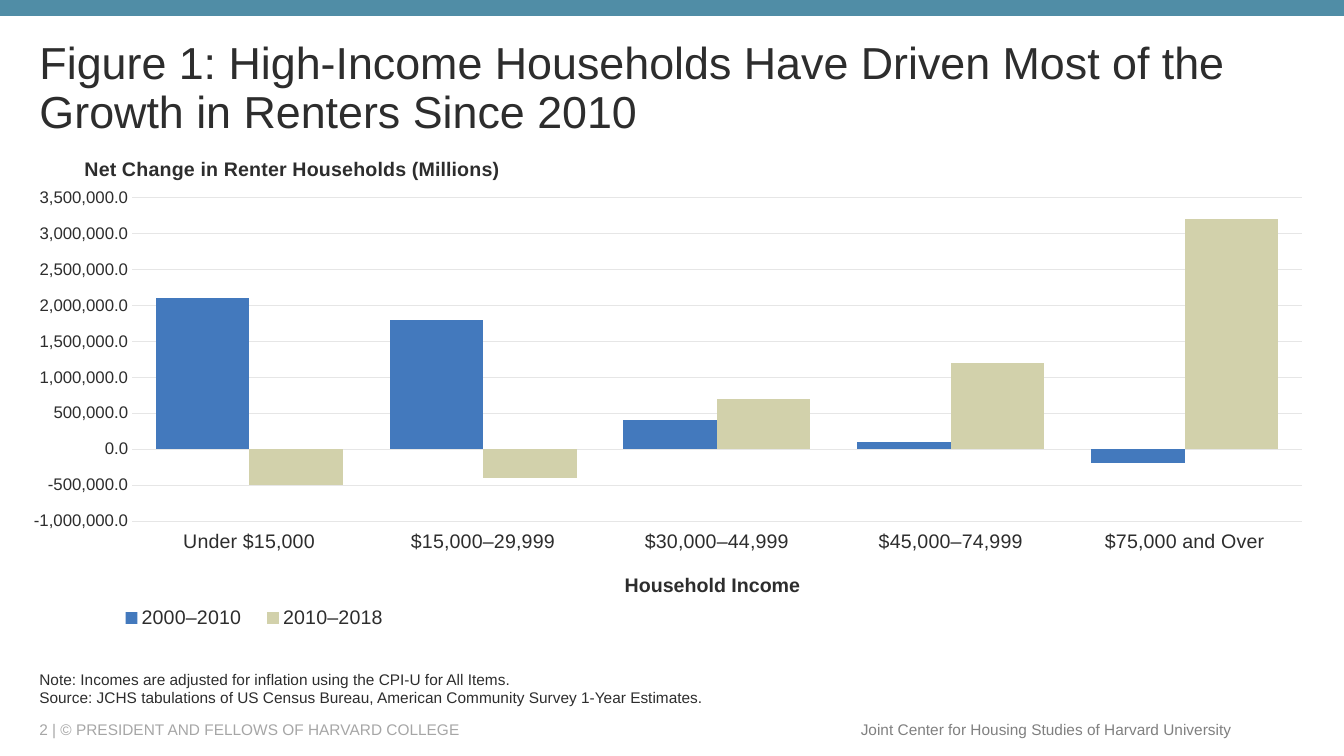
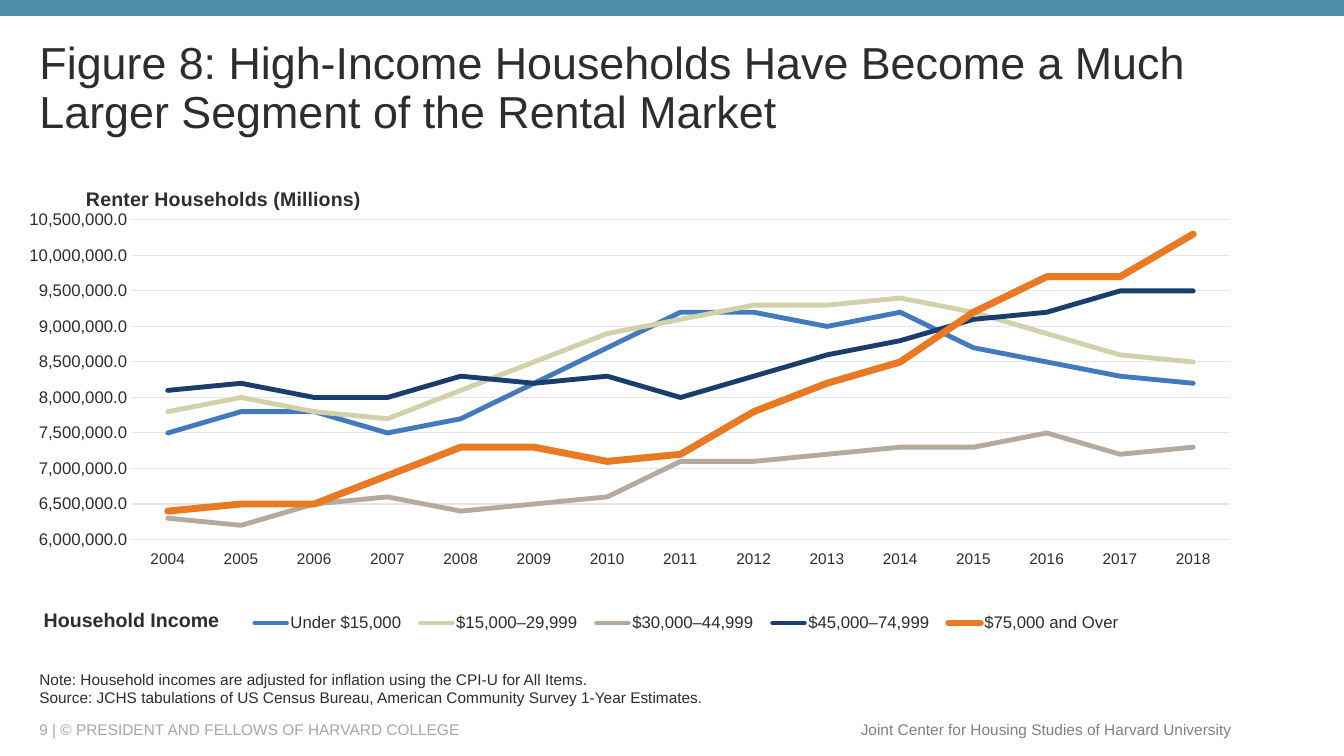
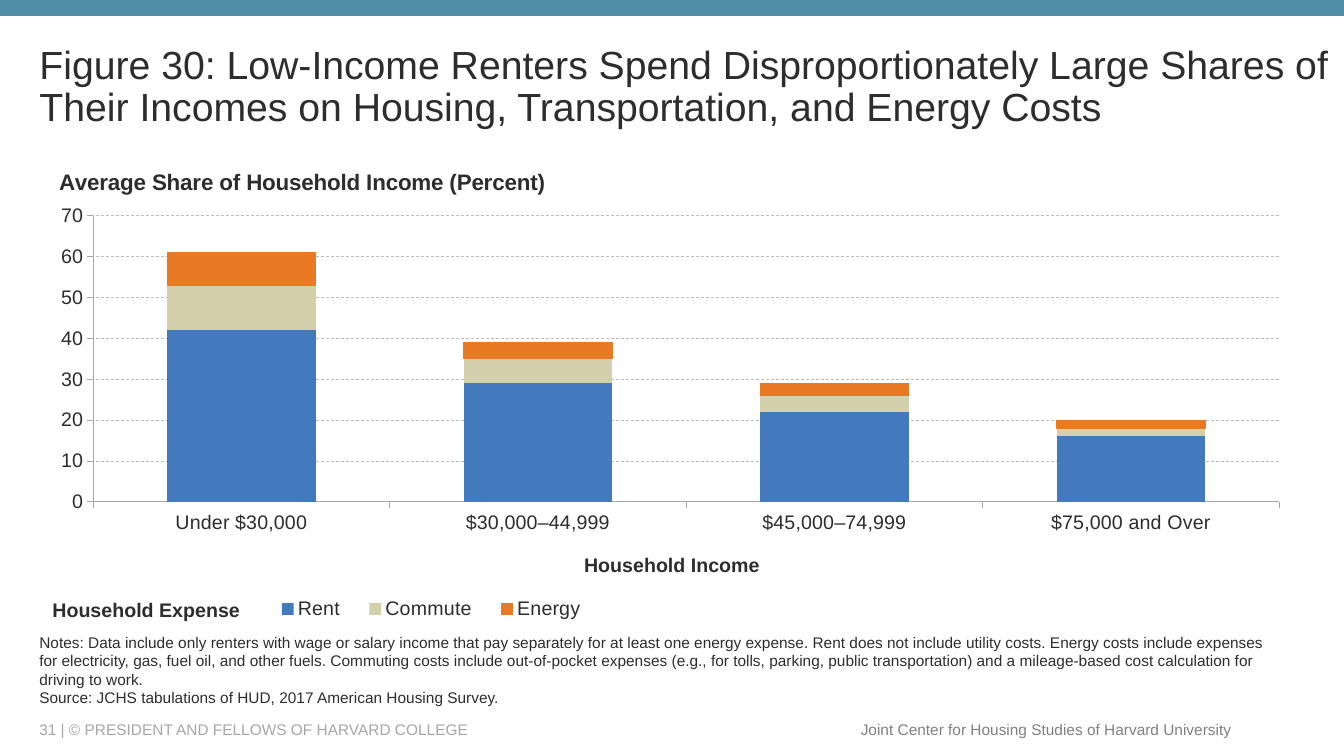
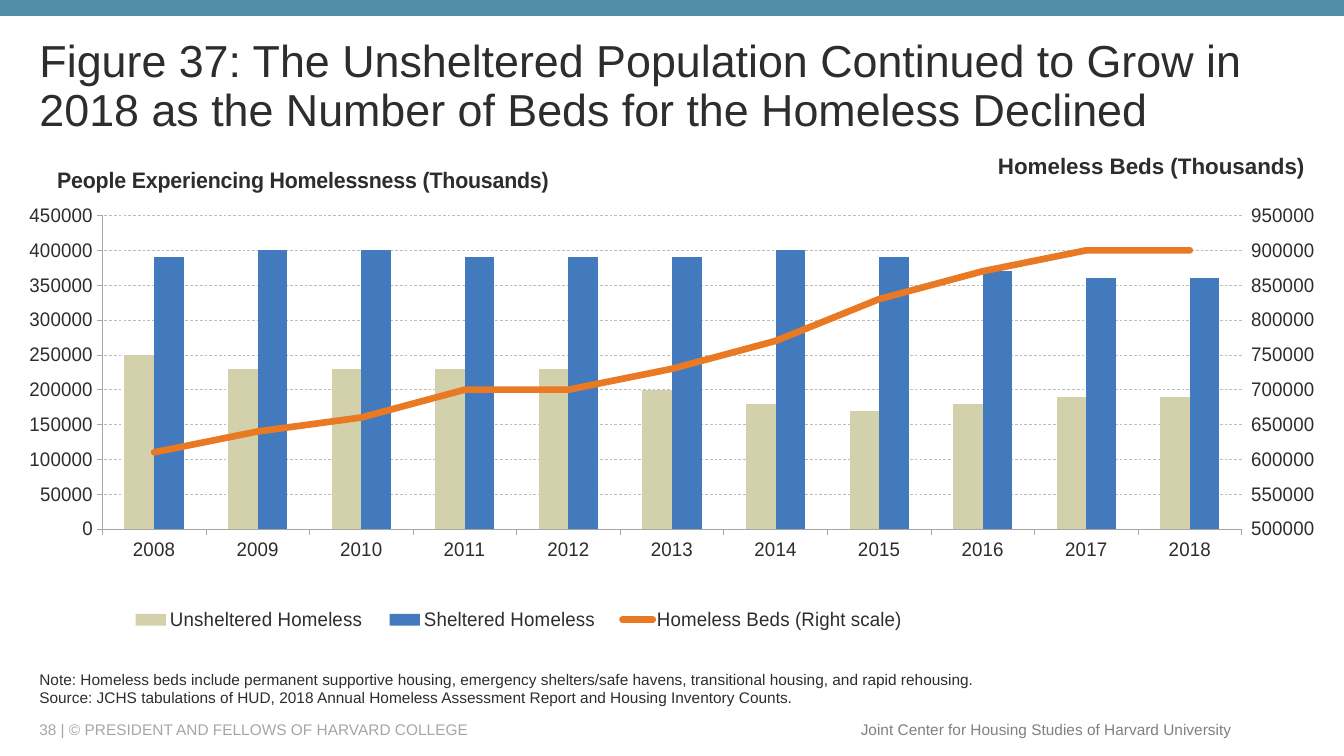
from lxml.etree import SubElement
from pptx import Presentation
from pptx.chart.axis import ValueAxis
from pptx.chart.data import CategoryChartData
from pptx.dml.color import RGBColor
from pptx.enum.chart import XL_CHART_TYPE, XL_LEGEND_POSITION, XL_MARKER_STYLE, XL_TICK_LABEL_POSITION, XL_TICK_MARK
from pptx.enum.dml import MSO_LINE
from pptx.enum.shapes import MSO_SHAPE
from pptx.enum.text import MSO_ANCHOR, MSO_AUTO_SIZE, PP_ALIGN
from pptx.oxml import parse_xml
from pptx.oxml.ns import nsdecls, qn
from pptx.util import Pt

COLORS = {
    "band": "508DA6", "ink": "2D2D2D", "gray": "808080", "pale": "A6A6A6",
    "mist": "E6E6E6", "dash": "BDBDBD", "blue": "4379BD", "sand": "D2D1AB",
    "stone": "B4AA9D", "navy": "1B3D6D", "orange": "EA7923",
}
FONT = "Arial"
LEFT = 21
SURVEY = "Source: JCHS tabulations of US Census Bureau, American Community Survey 1-Year Estimates."


def color(name):
    return RGBColor.from_string(COLORS[name])


def scale(values, unit):
    return [round(value * unit) for value in values]


def place(part, index, inner=False, **box):
    for old in part.findall(qn("c:layout")):
        part.remove(old)
    layout = parse_xml(f"<c:layout {nsdecls('c')}><c:manualLayout/></c:layout>")
    part.insert(index, layout)
    if inner:
        SubElement(layout[0], qn("c:layoutTarget"), val="inner")
    for side in "xy":
        SubElement(layout[0], qn(f"c:{side}Mode"), val="edge")
    for side, size in box.items():
        SubElement(layout[0], qn(f"c:{side}"), val=str(size))


class Deck:
    def __init__(self):
        self.show = Presentation()
        self.show.slide_width, self.show.slide_height = Pt(960), Pt(540)
        self.slide = None

    def style(self, font, size, tint="ink", bold=False):
        font.name, font.size, font.bold = FONT, Pt(size), bold
        font.color.rgb = color(tint)

    def stroke(self, line, tint, width, dashed=False):
        if tint is None:
            line.fill.background()
            return
        line.color.rgb = color(tint)
        line.width = Pt(width)
        if dashed:
            line.dash_style = MSO_LINE.DASH

    def start(self, number, title, box, size=32):
        self.slide = self.show.slides.add_slide(self.show.slide_layouts[5])
        band = self.slide.shapes.add_shape(MSO_SHAPE.RECTANGLE, 0, 0, Pt(960), Pt(11.3))
        band.shadow.inherit = False
        band.fill.solid()
        band.fill.fore_color.rgb = color("band")
        band.line.fill.background()
        head = self.slide.shapes.title
        head.left, head.top, head.width, head.height = map(Pt, box)
        frame = head.text_frame
        frame.text = title
        frame.word_wrap = True
        frame.auto_size = MSO_AUTO_SIZE.NONE
        frame.vertical_anchor = MSO_ANCHOR.MIDDLE
        para = frame.paragraphs[0]
        para.alignment = PP_ALIGN.LEFT
        para.line_spacing = 0.9
        self.style(para.font, size)
        middle = MSO_ANCHOR.MIDDLE
        self.text((LEFT, 513.5, 570, 14.5), f"{number} | © PRESIDENT AND FELLOWS OF HARVARD COLLEGE",
                  tint="pale", anchor=middle)
        self.text((606, 510.5, 281, 21), "Joint Center for Housing Studies of Harvard University",
                  tint="gray", align=PP_ALIGN.RIGHT, anchor=middle, wrap=False)

    def text(self, box, *lines, size=11, tint="ink", bold=False,
             align=PP_ALIGN.LEFT, anchor=MSO_ANCHOR.TOP, wrap=True):
        frame = self.slide.shapes.add_textbox(*map(Pt, box)).text_frame
        frame.word_wrap = wrap
        frame.vertical_anchor = anchor
        frame.text = "\n".join(lines)
        for para in frame.paragraphs:
            para.alignment = align
            self.style(para.font, size, tint, bold)

    def label(self, box, text):
        self.text(box, text, size=14, bold=True, align=PP_ALIGN.CENTER)

    def notes(self, *lines, width=846):
        self.text((LEFT, 466.5, width, 42), *lines, anchor=MSO_ANCHOR.BOTTOM)

    def chart(self, kind, box, cats, series):
        data = CategoryChartData()
        data.categories = cats
        for name, values, tint in series:
            data.add_series(name, values)
        chart = self.slide.shapes.add_chart(kind, *map(Pt, box), data).chart
        self.style(chart.font, 10)
        plot = chart.plots[0]
        plot.vary_by_categories = False
        for item, (name, values, tint) in zip(plot.series, series):
            if kind == XL_CHART_TYPE.LINE:
                self.curve(item, tint, 3.5)
            else:
                item.invert_if_negative = False
                item.format.fill.solid()
                item.format.fill.fore_color.rgb = color(tint)
        return chart

    def curve(self, item, tint, width):
        item.smooth = False
        item.marker.style = XL_MARKER_STYLE.NONE
        self.stroke(item.format.line, tint, width)
        for line in item.format.element.iter(qn("a:ln")) if hasattr(item.format, "element") else ():
            line.set("cap", "rnd")

    def bounds(self, axis, low, high, step):
        axis.minimum_scale, axis.maximum_scale, axis.major_unit = low, high, step

    def axis(self, axis, size, line, tick):
        axis.major_tick_mark = tick
        axis.minor_tick_mark = XL_TICK_MARK.NONE
        self.style(axis.tick_labels.font, size)
        self.stroke(axis.format.line, line, 0.5 if line == "pale" else 0.75)

    def axes(self, chart, sizes, limits, ticked):
        tick = XL_TICK_MARK.OUTSIDE if ticked else XL_TICK_MARK.NONE
        across, up = chart.category_axis, chart.value_axis
        self.axis(across, sizes[0], "pale" if ticked else "mist", tick)
        self.axis(up, sizes[1], "pale" if ticked else None, tick)
        across.tick_label_position = XL_TICK_LABEL_POSITION.LOW
        up.tick_labels.number_format = "General" if ticked else "#,##0.0"
        up.tick_labels.number_format_is_linked = False
        self.bounds(up, *limits)
        up.has_major_gridlines = True
        grid = up.major_gridlines.format.line
        self.stroke(grid, "dash" if ticked else "mist", 0.5 if ticked else 0.75, ticked)

    def frame(self, chart, title, size, spot, plot, key, key_size):
        chart.has_title = True
        chart.chart_title.text_frame.text = title
        self.style(chart.chart_title.text_frame.paragraphs[0].font, size, bold=True)
        chart.has_legend = True
        chart.legend.position = XL_LEGEND_POSITION.BOTTOM
        chart.legend.include_in_layout = False
        self.style(chart.legend.font, key_size)
        root = chart.element
        place(next(root.iter(qn("c:title"))), 1, **dict(zip("xy", spot)))
        place(next(root.iter(qn("c:plotArea"))), 0, True, **dict(zip("xywh", plot)))
        place(next(root.iter(qn("c:legend"))), 1, **dict(zip("xywh", key)))
        for item in root.iter(qn("c:ser")):
            for line in item.findall(f"{qn('c:spPr')}/{qn('a:ln')}"):
                line.set("cap", "rnd")

    def right(self, chart, tint, limits):
        area = next(chart.element.iter(qn("c:plotArea")))
        bars = area.find(qn("c:barChart"))
        item = bars.findall(qn("c:ser"))[-1]
        bars.remove(item)
        for tag in ("c:spPr", "c:invertIfNegative"):
            for old in item.findall(qn(tag)):
                item.remove(old)
        group = parse_xml(
            f'<c:lineChart {nsdecls("c")}><c:grouping val="standard"/><c:varyColors val="0"/>'
            '<c:marker val="1"/><c:axId val="501"/><c:axId val="502"/></c:lineChart>')
        group.insert(2, item)
        bars.addnext(group)
        last = area.findall(qn("c:valAx"))[-1]
        common = '<c:scaling><c:orientation val="minMax"/></c:scaling><c:delete val="{}"/><c:axPos val="{}"/>'
        up = parse_xml(
            f'<c:valAx {nsdecls("c")}><c:axId val="502"/>{common.format(0, "r")}'
            '<c:numFmt formatCode="General" sourceLinked="0"/><c:tickLblPos val="nextTo"/>'
            '<c:crossAx val="501"/><c:crosses val="max"/></c:valAx>')
        across = parse_xml(
            f'<c:catAx {nsdecls("c")}><c:axId val="501"/>{common.format(1, "b")}'
            '<c:crossAx val="502"/><c:crosses val="autoZero"/></c:catAx>')
        last.addnext(up)
        up.addnext(across)
        axis = ValueAxis(up)
        self.axis(axis, 14, None, XL_TICK_MARK.OUTSIDE)
        self.bounds(axis, *limits)
        self.curve(chart.plots[1].series[0], tint, 5)


def growth(deck):
    deck.start(2, "Figure 1: High-Income Households Have Driven Most of the Growth in Renters Since 2010",
               (LEFT, 29, 911, 70))
    deck.notes("Note: Incomes are adjusted for inflation using the CPI-U for All Items.", SURVEY)
    chart = deck.chart(
        XL_CHART_TYPE.COLUMN_CLUSTERED, (LEFT, 98.5, 918, 355.5),
        ["Under $15,000", "$15,000–29,999", "$30,000–44,999", "$45,000–74,999", "$75,000 and Over"],
        [("2000–2010", scale([2.1, 1.8, 0.4, 0.1, -0.2], 1e6), "blue"),
         ("2010–2018", scale([-0.5, -0.4, 0.7, 1.2, 3.2], 1e6), "sand")])
    chart.plots[0].gap_width = 50
    chart.plots[0].overlap = 0
    deck.axes(chart, (14, 12), (-1e6, 3.5e6, 5e5), False)
    deck.frame(chart, "Net Change in Renter Households (Millions)", 14, (0.04, 0.03),
               (0.08, 0.12, 0.91, 0.65), (0.06, 0.93, 0.23, 0.07), 14)
    deck.label((421, 406, 176, 24.5), "Household Income")


def segment(deck):
    deck.start(9, "Figure 8: High-Income Households Have Become a Much Larger Segment of the Rental Market",
               (LEFT, 29, 911, 70))
    chart = deck.chart(
        XL_CHART_TYPE.LINE, (LEFT, 124, 875, 331), [str(year) for year in range(2004, 2019)],
        [(name, scale(values, 1e5), tint) for name, values, tint in [
            ("Under $15,000", [75, 78, 78, 75, 77, 82, 87, 92, 92, 90, 92, 87, 85, 83, 82], "blue"),
            ("$15,000–29,999", [78, 80, 78, 77, 81, 85, 89, 91, 93, 93, 94, 92, 89, 86, 85], "sand"),
            ("$30,000–44,999", [63, 62, 65, 66, 64, 65, 66, 71, 71, 72, 73, 73, 75, 72, 73], "stone"),
            ("$45,000–74,999", [81, 82, 80, 80, 83, 82, 83, 80, 83, 86, 88, 91, 92, 95, 95], "navy"),
            ("$75,000 and Over", [64, 65, 65, 69, 73, 73, 71, 72, 78, 82, 85, 92, 97, 97, 103], "orange"),
        ]])
    chart.plots[0].series[4].format.line.width = Pt(5)
    deck.axes(chart, (11, 12), (6e6, 10.5e6, 5e5), False)
    deck.frame(chart, "Renter Households (Millions)", 14, (0.04, 0.02),
               (0.08, 0.1, 0.9, 0.69), (0.17, 0.94, 0.73, 0.06), 12)
    deck.notes("Note: Household incomes are adjusted for inflation using the CPI-U for All Items.", SURVEY)
    deck.label((LEFT, 430.5, 146, 24.5), "Household Income")


def shares(deck):
    deck.start(31, "Figure 30: Low-Income Renters Spend Disproportionately Large Shares of "
               "Their Incomes on Housing, Transportation, and Energy Costs", (LEFT, 18.5, 939, 88.5), 28)
    chart = deck.chart(
        XL_CHART_TYPE.COLUMN_STACKED, (LEFT, 106.5, 911, 340.5),
        ["Under $30,000", "$30,000–44,999", "$45,000–74,999", "$75,000 and Over"],
        [("Rent", [42, 29, 22, 16], "blue"),
         ("Commute", [11, 6, 4, 2], "sand"),
         ("Energy", [8, 4, 3, 2], "orange")])
    chart.plots[0].gap_width = chart.plots[0].overlap = 100
    deck.stroke(chart.plots[0].series[2].format.line, "orange", 0.75)
    deck.axes(chart, (14, 14), (0, 70, 10), True)
    deck.frame(chart, "Average Share of Household Income (Percent)", 16, (0.02, 0.03),
               (0.05, 0.14, 0.93, 0.6), (0.18, 0.93, 0.27, 0.07), 14)
    deck.notes(
        "Notes: Data include only renters with wage or salary income that pay separately for at least one "
        "energy expense. Rent does not include utility costs. Energy costs include expenses for electricity, "
        "gas, fuel oil, and other fuels. Commuting costs include out-of-pocket expenses (e.g., for tolls, "
        "parking, public transportation) and a mileage-based cost calculation for driving to work.",
        "Source: JCHS tabulations of HUD, 2017 American Housing Survey.", width=899)
    deck.label((398, 391.5, 164, 24.5), "Household Income")
    deck.label((LEFT, 423.5, 167, 24.5), "Household Expense")


def beds(deck):
    deck.start(38, "Figure 37: The Unsheltered Population Continued to Grow in 2018 as the Number of Beds "
               "for the Homeless Declined", (LEFT, 27.5, 911, 70))
    deck.notes("Note: Homeless beds include permanent supportive housing, emergency shelters/safe havens, "
               "transitional housing, and rapid rehousing.",
               "Source: JCHS tabulations of HUD, 2018 Annual Homeless Assessment Report and Housing "
               "Inventory Counts.")
    chart = deck.chart(
        XL_CHART_TYPE.COLUMN_CLUSTERED, (LEFT, 105, 918, 350), [str(year) for year in range(2008, 2019)],
        [(name, scale(values, 1e4), tint) for name, values, tint in [
            ("Unsheltered Homeless", [25, 23, 23, 23, 23, 20, 18, 17, 18, 19, 19], "sand"),
            ("Sheltered Homeless", [39, 40, 40, 39, 39, 39, 40, 39, 37, 36, 36], "blue"),
            ("Homeless Beds (Right scale)", [61, 64, 66, 70, 70, 73, 77, 83, 87, 90, 90], "orange"),
        ]])
    chart.plots[0].gap_width = 150
    chart.plots[0].overlap = 0
    deck.axes(chart, (14, 14), (0, 450000, 50000), True)
    deck.right(chart, "orange", (500000, 950000, 50000))
    deck.frame(chart, "People Experiencing Homelessness (Thousands)", 16, (0.01, 0.03),
               (0.05, 0.14, 0.93, 0.64), (0.06, 0.93, 0.66, 0.07), 14)
    deck.text((698.5, 105, 240.5, 26.5), "Homeless Beds (Thousands)", size=16, bold=True, align=PP_ALIGN.RIGHT)


def main():
    deck = Deck()
    for build in (growth, segment, shares, beds):
        build(deck)
    deck.show.save("out.pptx")


if __name__ == "__main__":
    main()
